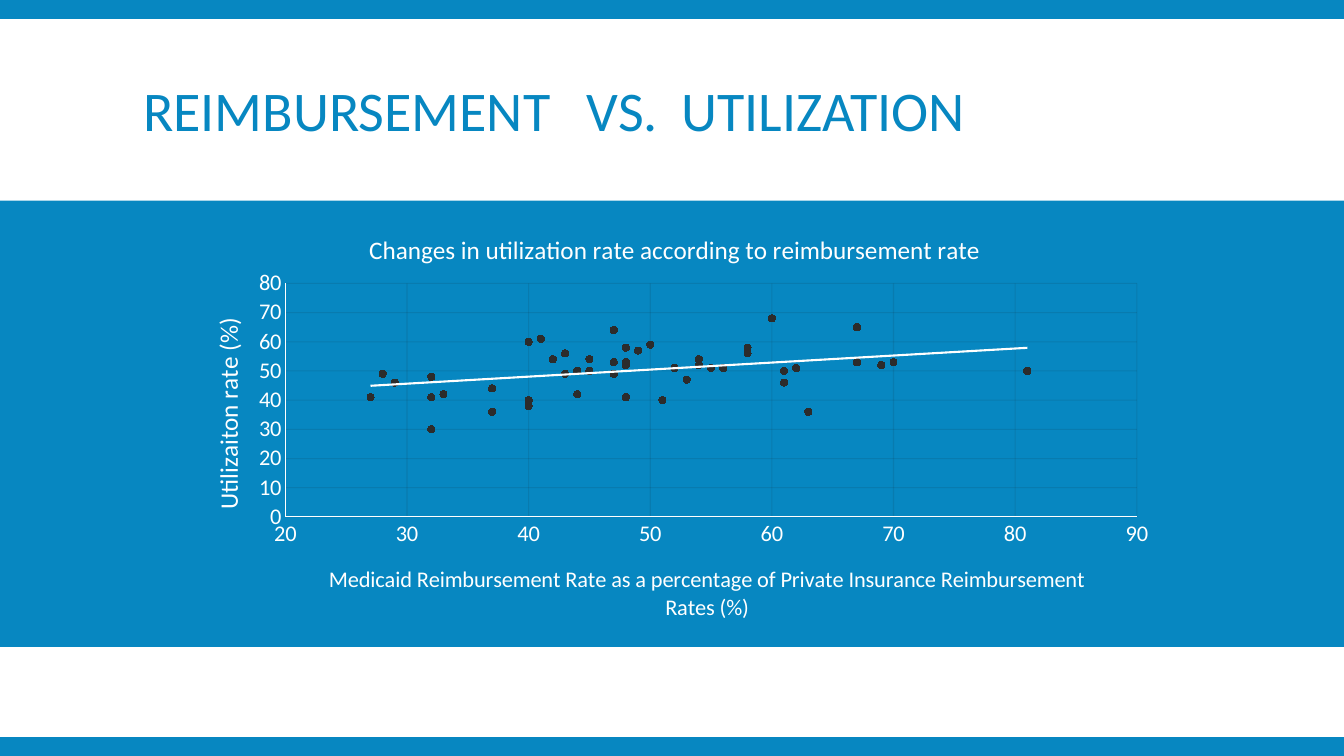
from pptx import Presentation
from pptx.chart.data import XyChartData
from pptx.dml.color import RGBColor
from pptx.enum.chart import XL_CHART_TYPE, XL_MARKER_STYLE, XL_TICK_MARK
from pptx.enum.shapes import MSO_SHAPE
from pptx.enum.text import MSO_ANCHOR, PP_ALIGN
from pptx.oxml import parse_xml
from pptx.oxml.ns import nsdecls
from pptx.util import Inches, Pt

theme = dict(font="Calibri", blue="0787C1", white="FFFFFF", dark="2C2C2C",
             grid="181818", head=40, title=18, label=16)

rates = [54, 62, 55, 67, 29, 45, 67, 81, 58, 37, 54, 47, 45, 32, 56, 42, 47,
         44, 61, 44, 48, 58, 32, 27, 48, 40, 53, 43, 48, 40, 69, 49, 37, 48,
         63, 40, 54, 33, 43, 28, 52, 51, 54, 60, 42, 50, 47, 41, 70, 32, 61]
usage = [52, 51, 51, 53, 46, 54, 65, 50, 58, 36, 54, 64, 50, 48, 51, 54, 49,
         50, 50, 42, 58, 56, 41, 41, 52, 40, 47, 56, 41, 60, 52, 57, 44, 53,
         36, 38, 52, 42, 49, 49, 51, 40, 52, 68, 54, 59, 53, 61, 53, 30, 46]


def style(font, size, color=theme["white"]):
    font.name, font.size, font.bold = theme["font"], Pt(size), False
    font.color.rgb = RGBColor.from_string(color)


def place(node, x, y, w=None, h=None):
    """Set a manual layout, in shares of the chart, on a title or plot area."""
    for old in node.findall("{*}layout"):
        node.remove(old)
    inner = '<c:layoutTarget val="inner"/>' if w else ""
    size = f'<c:w val="{w}"/><c:h val="{h}"/>' if w else ""
    layout = parse_xml(
        f'<c:layout {nsdecls("c")}><c:manualLayout>{inner}'
        '<c:xMode val="edge"/><c:yMode val="edge"/>'
        f'<c:x val="{x}"/><c:y val="{y}"/>{size}</c:manualLayout></c:layout>')
    text = node.find("{*}tx")
    if text is None:
        node.insert(0, layout)
    else:
        text.addnext(layout)


deck = Presentation()
deck.slide_width, deck.slide_height = Inches(13.33), Inches(7.5)
slide = deck.slides.add_slide(deck.slide_layouts[5])
white = RGBColor.from_string(theme["white"])

# Blue background with two white bands
slide.background.fill.solid()
slide.background.fill.fore_color.rgb = RGBColor.from_string(theme["blue"])
for top, height in ((0.19, 1.8), (6.42, 0.89)):
    band = slide.shapes.add_shape(MSO_SHAPE.RECTANGLE, 0, Inches(top),
                                  deck.slide_width, Inches(height))
    band.shadow.inherit = False
    band.fill.solid()
    band.fill.fore_color.rgb = white
    band.line.fill.background()

# Title, in front of the bands, with tab stops for its wide gaps
title = slide.shapes.title
slide.shapes._spTree.append(title._element)
title.left, title.top = Inches(1.32), Inches(0.31)
title.width, title.height = Inches(10.7), Inches(1.65)
title.text_frame.text = "REIMBURSEMENT\tVS.\tUTILIZATION"
title.text_frame.vertical_anchor = MSO_ANCHOR.MIDDLE
head = title.text_frame.paragraphs[0]
head.alignment, head.line_spacing = PP_ALIGN.LEFT, 0.85
stops = "".join(f'<a:tab pos="{Inches(at)}" algn="l"/>' for at in (4.4, 5.34))
head._p.get_or_add_pPr().append(
    parse_xml(f'<a:tabLst {nsdecls("a")}>{stops}</a:tabLst>'))
style(head.font, theme["head"], theme["blue"])

# Scatter chart
data = XyChartData()
points = data.add_series("Series 1")
for rate, use in zip(rates, usage):
    points.add_data_point(rate, use)
chart = slide.shapes.add_chart(XL_CHART_TYPE.XY_SCATTER, Inches(1.75), Inches(2.04),
                               Inches(9.82), Inches(4.29), data).chart
style(chart.font, theme["label"])
chart.has_legend = False
plot = chart.plots[0]
plot.vary_by_categories = False
place(chart._chartSpace.chart.plotArea, 0.11, 0.18, 0.86, 0.54)

# Chart and axis titles
across, up = chart.category_axis, chart.value_axis
for owner, text, size, x, y in (
        (chart, "Changes in utilization rate according to reimbursement rate",
         theme["title"], 0.19, 0.05),
        (across, "Medicaid Reimbursement Rate as a percentage of Private "
         "Insurance Reimbursement Rates (%)", theme["label"], 0.15, 0.82),
        (up, "Utilizaiton rate (%)", theme["title"], 0.03, 0.25)):
    owner.has_title = True
    name = owner.chart_title if owner is chart else owner.axis_title
    name.text_frame.text = text
    style(name.text_frame.paragraphs[0].font, size)
    place(name._element, x, y)

# Axes and faint grid
for axis, low, high in ((across, 20, 90), (up, 0, 80)):
    axis.minimum_scale, axis.maximum_scale, axis.major_unit = low, high, 10
    axis.major_tick_mark = axis.minor_tick_mark = XL_TICK_MARK.NONE
    style(axis.tick_labels.font, theme["label"])
    axis.format.line.color.rgb = white
    axis.has_major_gridlines = True
    grid = axis.major_gridlines.format.line
    grid.color.rgb = RGBColor.from_string(theme["grid"])
    axis.format.line.width = grid.width = Pt(0.75)
    tint = axis.major_gridlines._xAx.find("{*}majorGridlines//{*}srgbClr")
    tint.append(parse_xml(f'<a:alpha {nsdecls("a")} val="10000"/>'))

# Dots and linear trend
dots = plot.series[0]
dots.format.line.fill.background()
dots.marker.style, dots.marker.size = XL_MARKER_STYLE.CIRCLE, 5
dots.marker.format.fill.solid()
for ink in (dots.marker.format.fill.fore_color, dots.marker.format.line.color):
    ink.rgb = RGBColor.from_string(theme["dark"])
dots._element.find("{*}xVal").addprevious(parse_xml(
    f'<c:trendline {nsdecls("c", "a")}><c:spPr><a:ln w="{Pt(1.5)}"><a:solidFill>'
    f'<a:srgbClr val="{theme["white"]}"/></a:solidFill></a:ln></c:spPr>'
    '<c:trendlineType val="linear"/><c:dispRSqr val="0"/><c:dispEq val="0"/>'
    '</c:trendline>'))

deck.save("out.pptx")
